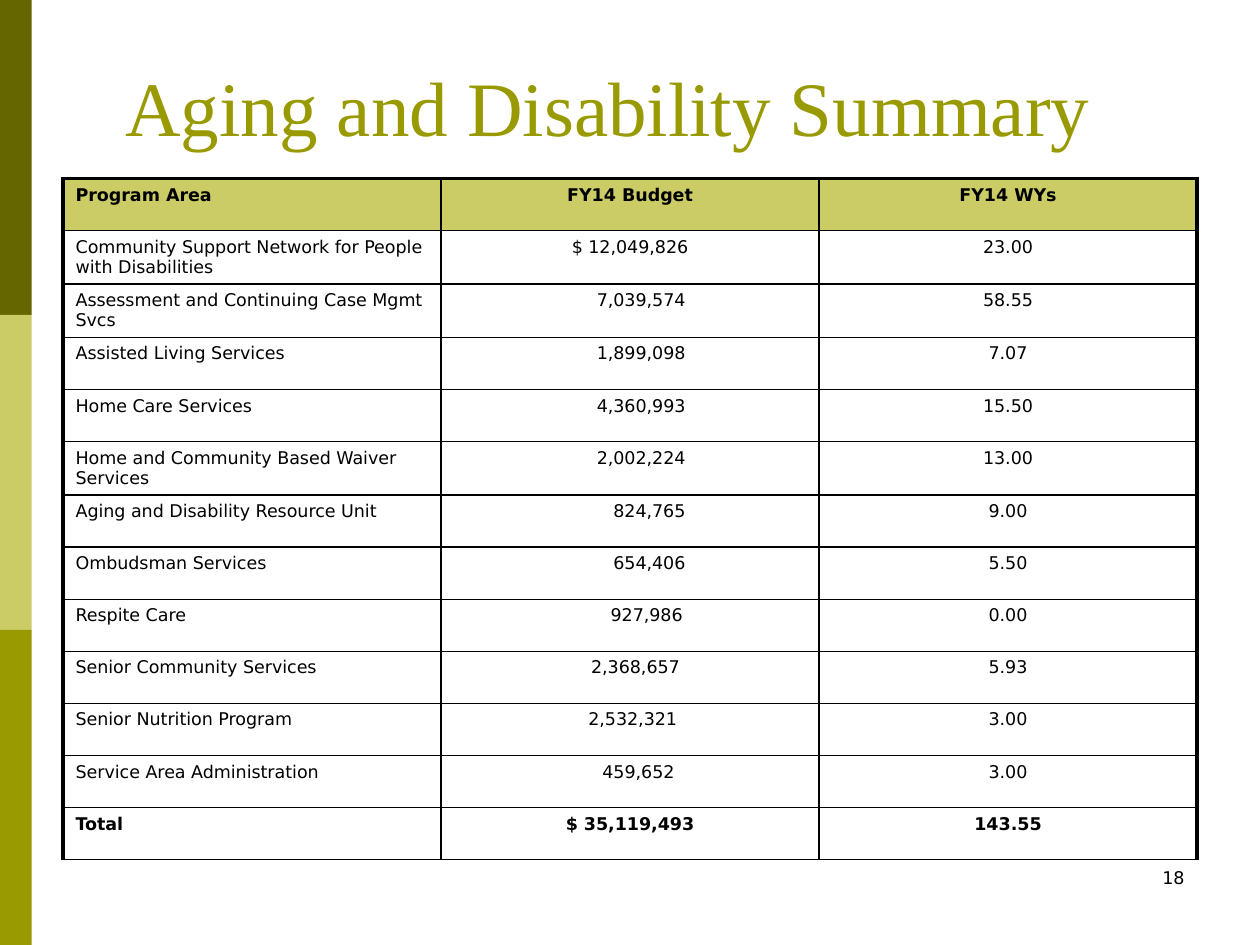
import pptx
import pptx.dml.color
import pptx.enum.shapes
import pptx.enum.text
import pptx.oxml.ns
import pptx.util
from lxml import etree

Cm = pptx.util.Cm
Pt = pptx.util.Pt
RGBColor = pptx.dml.color.RGBColor
ALIGN = pptx.enum.text.PP_ALIGN
ANCHOR = pptx.enum.text.MSO_ANCHOR

BLACK = RGBColor(0x00, 0x00, 0x00)
DARK_OLIVE = RGBColor(0x66, 0x66, 0x00)
OLIVE = RGBColor(0x99, 0x99, 0x00)
PALE_OLIVE = RGBColor(0xCC, 0xCC, 0x66)

BODY_FONT = "DejaVu Sans"
TITLE_FONT = "Times New Roman"
THIN, THICK = 1, 2.25

# Program area, budget, budget indent (cm), work years
ROWS = [
    ("Program Area", "FY14 Budget", 0, "FY14 WYs"),
    ("Community Support Network for People with Disabilities", "$ 12,049,826", 0, "23.00"),
    ("Assessment and Continuing Case Mgmt Svcs", "7,039,574", 0.45, "58.55"),
    ("Assisted Living Services", "1,899,098", 0.45, "7.07"),
    ("Home Care Services", "4,360,993", 0.45, "15.50"),
    ("Home and Community Based Waiver Services", "2,002,224", 0.45, "13.00"),
    ("Aging and Disability Resource Unit", "824,765", 0.78, "9.00"),
    ("Ombudsman Services", "654,406", 0.78, "5.50"),
    ("Respite Care", "927,986", 0.67, "0.00"),
    ("Senior Community Services", "2,368,657", 0.22, "5.93"),
    ("Senior Nutrition Program", "2,532,321", 0.11, "3.00"),
    ("Service Area Administration", "459,652", 0.34, "3.00"),
    ("Total", "$ 35,119,493", 0, "143.55"),
]


def add_run(p, text, size=10, font=BODY_FONT, color=BLACK, bold=False):
    r = p.add_run()
    r.text = text
    r.font.size = Pt(size)
    r.font.name = font
    r.font.color.rgb = color
    r.font.bold = bold


def add_side_band(slide, top, height, color):
    sp = slide.shapes.add_shape(
        pptx.enum.shapes.MSO_SHAPE.RECTANGLE, 0, top, Cm(0.64), height)
    sp.shadow.inherit = False
    sp.fill.solid()
    sp.fill.fore_color.rgb = color
    sp.line.fill.background()


def set_title(slide, text):
    sp = slide.shapes.title
    sp.left, sp.top, sp.width, sp.height = Cm(1.27), 0, Cm(22.86), Cm(3.18)
    tf = sp.text_frame
    tf.auto_size = pptx.enum.text.MSO_AUTO_SIZE.NONE
    tf.vertical_anchor = ANCHOR.BOTTOM
    tf.margin_right = Cm(1.14)  # shifts the centred title to the left
    p = tf.paragraphs[0]
    p.alignment = ALIGN.CENTER
    add_run(p, text, 44, TITLE_FONT, OLIVE)


def set_borders(cell, widths):
    tc_pr = cell._tc.get_or_add_tcPr()
    for side, width in zip("LRTB", widths):
        ln = etree.SubElement(tc_pr, pptx.oxml.ns.qn(f"a:ln{side}"), w=str(Pt(width)))
        fill = etree.SubElement(ln, pptx.oxml.ns.qn("a:solidFill"))
        etree.SubElement(fill, pptx.oxml.ns.qn("a:srgbClr"), val=str(BLACK))


def fill_cell(cell, text, align, indent, bold):
    p = cell.text_frame.paragraphs[0]
    p.alignment = align
    if indent:
        p._p.get_or_add_pPr().set("marL", str(Cm(indent)))
    add_run(p, text, bold=bold)


def add_budget_table(slide):
    row_height = Cm(1.05)
    frame = slide.shapes.add_table(
        len(ROWS), 3, Cm(1.27), Cm(3.6), Cm(22.86), row_height * len(ROWS))
    table = frame.table
    table.first_row = table.horz_banding = False
    for col in table.columns:
        col.width = Cm(7.62)
    for i, (area, budget, indent, work_years) in enumerate(ROWS):
        table.rows[i].height = row_height
        bold = i in (0, len(ROWS) - 1)
        entries = [(area, ALIGN.LEFT, 0), (budget, ALIGN.CENTER, indent),
                   (work_years, ALIGN.CENTER, 0)]
        for j, (text, align, margin) in enumerate(entries):
            cell = table.cell(i, j)
            fill_cell(cell, text, align, margin, bold)
            set_borders(cell, (THICK if j == 0 else THIN, THICK if j == 2 else THIN,
                               THICK if i == 0 else THIN, THIN))
            if i == 0:
                cell.fill.solid()
                cell.fill.fore_color.rgb = PALE_OLIVE
            else:
                cell.fill.background()


def add_page_number(slide, text):
    sp = slide.shapes.add_textbox(Cm(18.2), Cm(17.35), Cm(5.93), Cm(1.27))
    tf = sp.text_frame
    tf.word_wrap = True
    p = tf.paragraphs[0]
    p.alignment = ALIGN.RIGHT
    add_run(p, text)


def main():
    prs = pptx.Presentation()
    prs.slide_width, prs.slide_height = Cm(25.4), Cm(19.05)
    slide = prs.slides.add_slide(prs.slide_layouts[5])

    # Side bands
    band_height = Cm(6.35)
    for i, color in enumerate((DARK_OLIVE, PALE_OLIVE, OLIVE)):
        add_side_band(slide, i * band_height, band_height, color)

    # Title, table and page number
    set_title(slide, "Aging and Disability Summary")
    add_budget_table(slide)
    add_page_number(slide, "18")

    prs.save("out.pptx")


if __name__ == "__main__":
    main()
